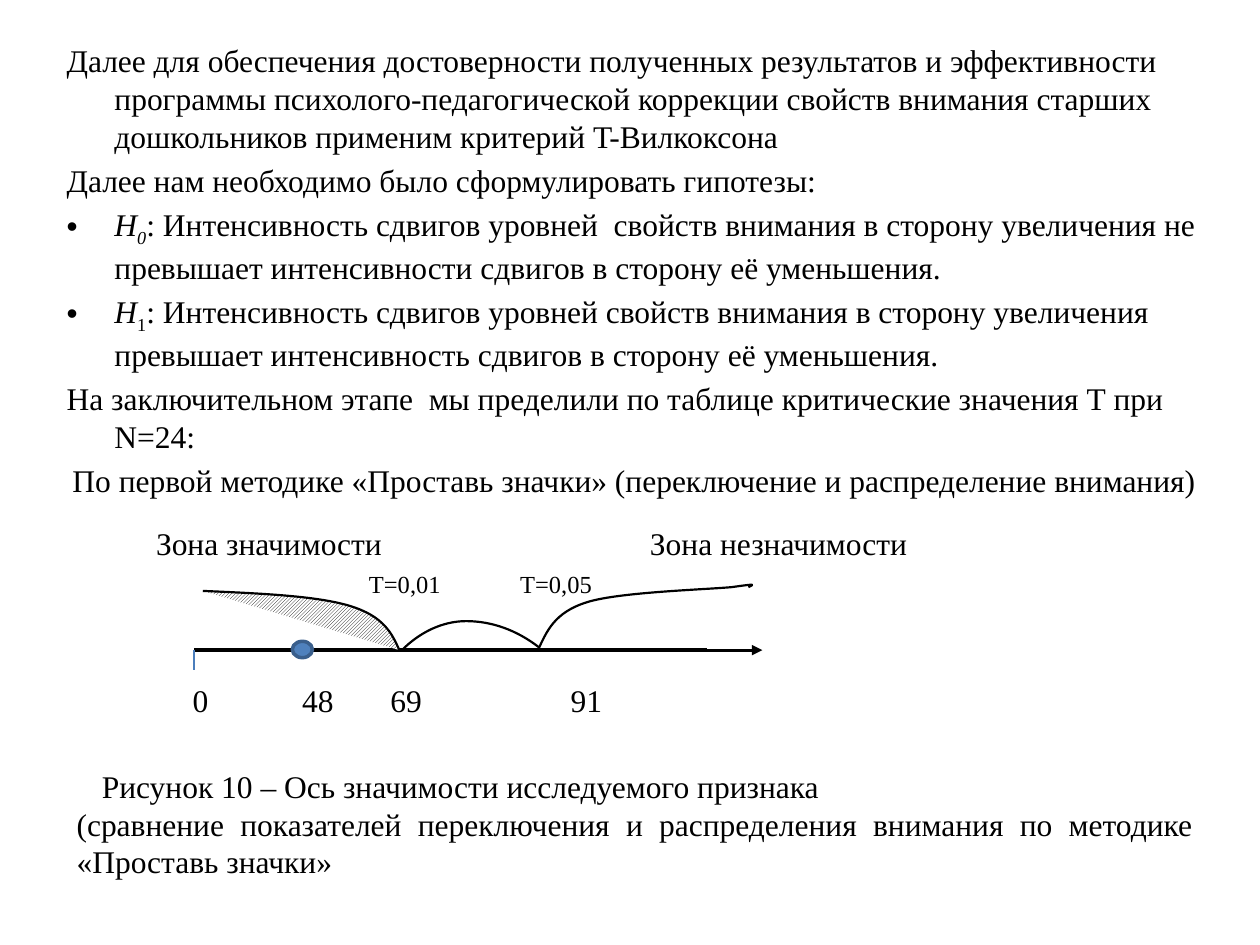
from lxml.etree import SubElement
from pptx import Presentation
from pptx.dml.color import RGBColor
from pptx.enum.dml import MSO_PATTERN
from pptx.enum.shapes import MSO_CONNECTOR, MSO_SHAPE
from pptx.enum.text import MSO_ANCHOR, PP_ALIGN
from pptx.oxml.ns import qn
from pptx.util import Inches, Pt


class Theme:
    font = "Times New Roman"
    body_size = 18
    small_size = 14
    ink = RGBColor.from_string("000000")
    paper = RGBColor.from_string("FFFFFF")
    marker_fill = RGBColor.from_string("4F81BD")
    marker_line = RGBColor.from_string("3A5F8C")
    tick = RGBColor.from_string("4B7EBC")


# Each paragraph: (kind, [(text, style), ...])
BODY = [
    ("plain", [("Далее для обеспечения достоверности полученных результатов и эффективности "
                "программы психолого-педагогической коррекции свойств внимания старших "
                "дошкольников применим критерий T-Вилкоксона", "")]),
    ("plain", [("Далее нам необходимо было сформулировать гипотезы:", "")]),
    ("bullet", [("Н", "italic"), ("0", "italic subscript"),
                (": Интенсивность сдвигов уровней  свойств внимания в сторону увеличения не "
                 "превышает интенсивности сдвигов в сторону её уменьшения.", "")]),
    ("bullet", [("Н", "italic"), ("1", "subscript"),
                (": Интенсивность сдвигов уровней свойств внимания в сторону увеличения "
                 "превышает интенсивность сдвигов в сторону её уменьшения.", "")]),
    ("plain", [("На заключительном этапе  мы пределили по таблице критические значения Т "
                "при N=24:", "")]),
    ("centered", [("По первой методике «Проставь значки» (переключение и распределение "
                   "внимания)", "")]),
    ("scale", [("\t0\t48\t69\t91", "")]),
]
SCALE_TABS = [1, 1.87, 2.57, 4]
SCALE_GAP = 104
# Each row: (tab stops, [(text, type size), ...])
ZONE_LABELS = [
    ([3.92], [("Зона значимости\tЗона незначимости", Theme.body_size)]),
    ([1.69, 2.89], [("\t", Theme.body_size), ("Т=0,01\tТ=0,05", Theme.small_size)]),
]
# Each line: (text, first-line indent)
CAPTION = [
    ("Рисунок 10 – Ось значимости исследуемого признака", 0.2),
    ("(сравнение показателей переключения и распределения внимания по методике "
     "«Проставь значки»", 0),
]
AXIS_Y = 5.16
AXIS_START = 1.54
# Bezier curves: start point, then groups of two control points and an end point
SIGNIFICANT = [(3.17, 5.16), (3.11, 5.02), (3.04, 4.89), (2.78, 4.81),
               (2.52, 4.73), (2.07, 4.71), (1.61, 4.69)]
UNCERTAIN = [(4.28, 5.14), (4.1, 5), (3.9, 4.93), (3.7, 4.93),
             (3.51, 4.93), (3.33, 5.02), (3.19, 5.16)]
INSIGNIFICANT = [(4.27, 5.16), (4.34, 5.01), (4.4, 4.86), (4.66, 4.78),
                 (4.91, 4.7), (5.6, 4.68), (5.81, 4.66),
                 (6.02, 4.63), (5.98, 4.64), (5.94, 4.66)]


def add_run(paragraph, text, size=Theme.body_size, style=""):
    run = paragraph.add_run()
    run.text = text
    run.font.name = Theme.font
    run.font.size = Pt(size)
    run.font.color.rgb = Theme.ink
    run.font.italic = "italic" in style
    if "subscript" in style:
        run.font._element.set("baseline", "-25000")


def set_indent(paragraph, left, first):
    properties = paragraph._p.get_or_add_pPr()
    properties.set("marL", str(Inches(left)))
    properties.set("indent", str(Inches(first)))
    return properties


def set_tabs(paragraph, stops):
    tabs = SubElement(paragraph._p.get_or_add_pPr(), qn("a:tabLst"))
    for stop in stops:
        SubElement(tabs, qn("a:tab"), pos=str(Inches(stop)), algn="l")


def add_text_frame(slide, left, top, width, height):
    frame = slide.shapes.add_textbox(*map(Inches, (left, top, width, height))).text_frame
    frame.word_wrap = True
    return frame


def next_paragraph(frame, index):
    return frame.add_paragraph() if index else frame.paragraphs[0]


def add_body(slide):
    frame = add_text_frame(slide, 0.43, 0.28, 9.21, 6.85)
    for index, (kind, pieces) in enumerate(BODY):
        paragraph = next_paragraph(frame, index)
        paragraph.space_before = Pt(0.2 * Theme.body_size)
        if kind == "scale":
            paragraph.space_before = Pt(SCALE_GAP)
            set_tabs(paragraph, SCALE_TABS)
        else:
            properties = set_indent(paragraph, 0.38, -0.38)
        if kind == "centered":
            paragraph.alignment = PP_ALIGN.CENTER
        if kind == "bullet":
            SubElement(properties, qn("a:buFont"), typeface="Arial")
            SubElement(properties, qn("a:buChar"), char="•")
        for text, style in pieces:
            add_run(paragraph, text, style=style)


def add_zone_labels(slide):
    frame = add_text_frame(slide, 1.14, 4.11, 7.83, 1.01)
    for index, (stops, pieces) in enumerate(ZONE_LABELS):
        paragraph = next_paragraph(frame, index)
        set_tabs(paragraph, stops)
        for text, size in pieces:
            add_run(paragraph, text, size)


def add_caption(slide):
    frame = add_text_frame(slide, 0.51, 6.03, 9.06, 1.01)
    frame.vertical_anchor = MSO_ANCHOR.MIDDLE
    for index, (text, first) in enumerate(CAPTION):
        paragraph = next_paragraph(frame, index)
        paragraph.alignment = PP_ALIGN.JUSTIFY
        set_indent(paragraph, 0, first)
        add_run(paragraph, text)


def add_line(slide, start, end, color, width, arrow=False):
    line = slide.shapes.add_connector(MSO_CONNECTOR.STRAIGHT, *map(Inches, start + end))
    line.line.color.rgb = color
    line.line.width = Pt(width)
    if arrow:
        SubElement(line.line._get_or_add_ln(), qn("a:tailEnd"), type="triangle")
    SubElement(line._element.spPr, qn("a:effectLst"))


def add_curve(slide, points, hatched=False):
    """Draw the end points as a freeform, then bend each segment into a cubic Bezier."""
    corners = [tuple(map(Inches, point)) for point in points]
    builder = slide.shapes.build_freeform(*corners[0])
    builder.add_line_segments(corners[3::3], close=False)
    curve = builder.convert_to_shape()
    segments = list(curve._element.iter(qn("a:lnTo")))
    for index, segment in enumerate(segments):
        segment.tag = qn("a:cubicBezTo")
        segment.remove(segment[0])
        for x, y in corners[3 * index + 1:3 * index + 4]:
            SubElement(segment, qn("a:pt"), x=str(x - curve.left), y=str(y - curve.top))
    curve.shadow.inherit = False
    curve.line.color.rgb = Theme.ink
    curve.line.width = Pt(1.25)
    if hatched:
        curve.fill.patterned()
        curve.fill.pattern = MSO_PATTERN.DARK_UPWARD_DIAGONAL
        curve.fill.fore_color.rgb = Theme.ink
        curve.fill.back_color.rgb = Theme.paper
    else:
        curve.fill.background()


def add_marker(slide):
    marker = slide.shapes.add_shape(MSO_SHAPE.FLOWCHART_CONNECTOR,
                                    *map(Inches, (2.32, 5.09, 0.16, 0.13)))
    marker.shadow.inherit = False
    marker.fill.solid()
    marker.fill.fore_color.rgb = Theme.marker_fill
    marker.line.color.rgb = Theme.marker_line
    marker.line.width = Pt(2)


def main():
    presentation = Presentation()
    presentation.slide_width, presentation.slide_height = Inches(10), Inches(7.5)
    slide = presentation.slides.add_slide(presentation.slide_layouts[6])
    add_body(slide)
    add_zone_labels(slide)
    add_line(slide, (AXIS_START, AXIS_Y), (5.61, AXIS_Y), Theme.ink, 2)
    add_line(slide, (5.55, AXIS_Y), (6.05, AXIS_Y), Theme.ink, 1.75, arrow=True)
    add_curve(slide, SIGNIFICANT, hatched=True)
    add_curve(slide, UNCERTAIN)
    add_curve(slide, INSIGNIFICANT)
    add_caption(slide)
    add_marker(slide)
    add_line(slide, (AXIS_START, AXIS_Y), (AXIS_START, 5.32), Theme.tick, 0.75)
    presentation.save("out.pptx")


if __name__ == "__main__":
    main()
